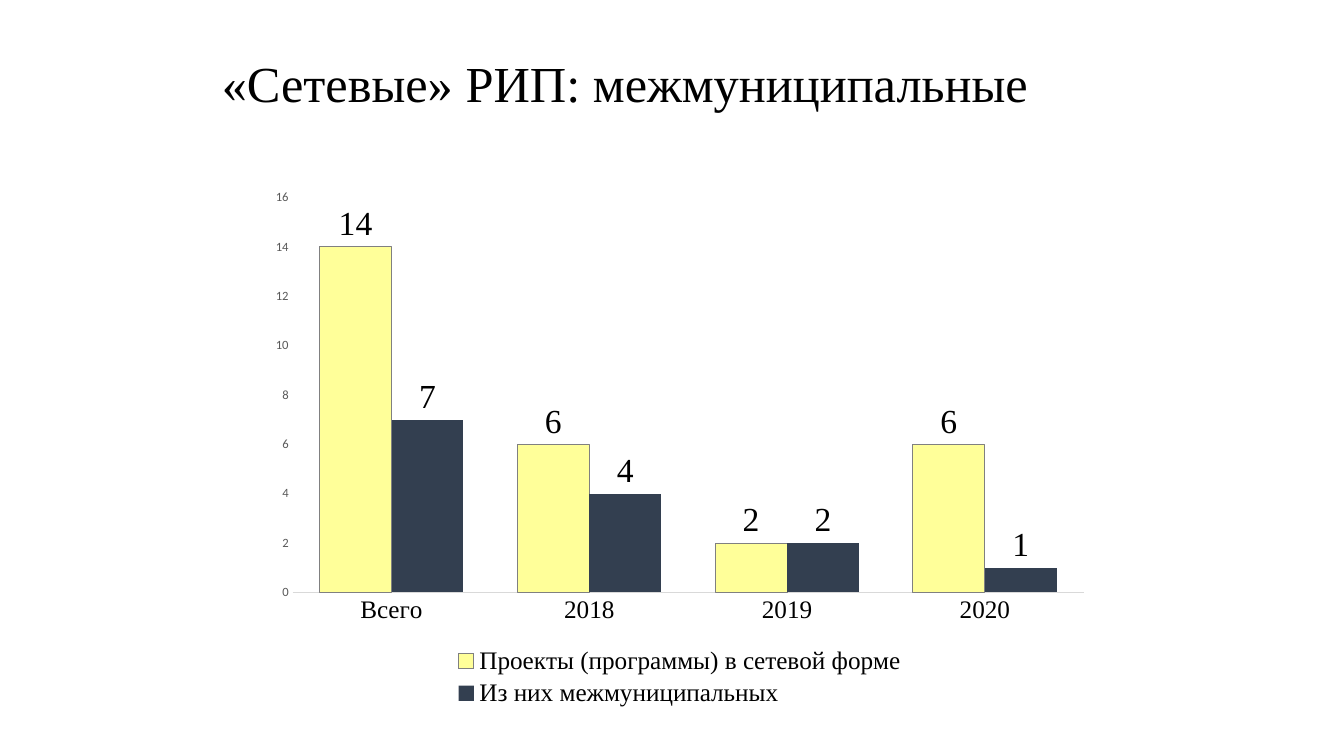
"""Build a slide with a clustered column chart of network projects by year."""
from lxml import etree
from pptx import Presentation
from pptx.chart.data import CategoryChartData
from pptx.dml.color import RGBColor
from pptx.enum.chart import XL_CHART_TYPE as ChartType
from pptx.enum.chart import XL_LABEL_POSITION as LabelPosition
from pptx.enum.chart import XL_LEGEND_POSITION as LegendPosition
from pptx.enum.chart import XL_TICK_MARK as TickMark
from pptx.enum.text import MSO_ANCHOR, MSO_AUTO_SIZE, PP_ALIGN
from pptx.oxml.ns import qn
from pptx.util import Pt

BLACK = RGBColor(0x00, 0x00, 0x00)
WHITE = RGBColor(0xFF, 0xFF, 0xFF)
GREY = RGBColor(0x80, 0x80, 0x80)
DARK_GREY = RGBColor(0x59, 0x59, 0x59)
LIGHT_GREY = RGBColor(0xD9, 0xD9, 0xD9)
YELLOW = RGBColor(0xFF, 0xFF, 0x99)
NAVY = RGBColor(0x33, 0x3F, 0x50)

SERIF = "Times New Roman"
SANS = "Calibri"

PERIODS = ["Всего", "2018", "2019", "2020"]
PROJECTS = [
    ("Проекты (программы) в сетевой форме", [14, 6, 2, 6], YELLOW, GREY),
    ("Из них межмуниципальных", [7, 4, 2, 1], NAVY, None),
]


def style_font(font, size, color=BLACK, name=SERIF):
    font.size = Pt(size)
    font.name = name
    font.bold = False
    font.color.rgb = color


def set_layout(parent, index, x, y, w, h, inner=False):
    for old in parent.findall(qn("c:layout")):
        parent.remove(old)
    layout = etree.Element(qn("c:layout"))
    manual = etree.SubElement(layout, qn("c:manualLayout"))
    settings = [("layoutTarget", "inner")] if inner else []
    settings += [("xMode", "edge"), ("yMode", "edge"),
                 ("x", x), ("y", y), ("w", w), ("h", h)]
    for tag, value in settings:
        etree.SubElement(manual, qn(f"c:{tag}")).set("val", str(value))
    parent.insert(index, layout)


def write_title(slide, text):
    title = slide.shapes.title
    title.left, title.top, title.width, title.height = (
        Pt(151.2), Pt(9.4), Pt(620.6), Pt(104.4))
    frame = title.text_frame
    frame.auto_size = MSO_AUTO_SIZE.NONE
    frame.word_wrap = True
    frame.vertical_anchor = MSO_ANCHOR.MIDDLE
    paragraph = frame.paragraphs[0]
    paragraph.alignment = PP_ALIGN.LEFT
    paragraph.line_spacing = 0.9
    run = paragraph.add_run()
    run.text = text
    style_font(run.font, 36)


def style_axes(chart):
    periods, counts = chart.category_axis, chart.value_axis
    for axis in (periods, counts):
        axis.has_major_gridlines = False
        axis.major_tick_mark = axis.minor_tick_mark = TickMark.NONE
    style_font(periods.tick_labels.font, 18)
    periods.format.line.color.rgb = LIGHT_GREY
    periods.format.line.width = Pt(0.75)
    style_font(counts.tick_labels.font, 9, DARK_GREY, SANS)
    counts.format.line.fill.background()
    counts.minimum_scale, counts.maximum_scale = 0, 16
    counts.major_unit = 2


def style_columns(series, fill, outline):
    series.invert_if_negative = False
    series.format.fill.solid()
    series.format.fill.fore_color.rgb = fill
    if outline is None:
        series.format.line.fill.background()
    else:
        series.format.line.color.rgb = outline
        series.format.line.width = Pt(0.75)
    labels = series.data_labels
    labels.show_value = True
    labels.position = LabelPosition.OUTSIDE_END
    style_font(labels.font, 24)


def add_projects_chart(slide):
    projects = CategoryChartData()
    projects.categories = PERIODS
    for name, counts, _, _ in PROJECTS:
        projects.add_series(name, counts)
    chart = slide.shapes.add_chart(
        ChartType.COLUMN_CLUSTERED, Pt(185), Pt(128.2), Pt(601.2), Pt(380.2),
        projects).chart
    style_font(chart.font, 10, BLACK, SANS)
    chart.has_title = False
    style_axes(chart)

    plot = chart.plots[0]
    plot.gap_width, plot.overlap = 75, 0
    plot.vary_by_categories = False
    for series, (_, _, fill, outline) in zip(plot.series, PROJECTS):
        style_columns(series, fill, outline)

    chart.has_legend = True
    legend = chart.legend
    legend.position = LegendPosition.BOTTOM
    legend.include_in_layout = False
    style_font(legend.font, 18)
    chart_part = chart.element.find(qn("c:chart"))
    set_layout(chart_part.find(qn("c:plotArea")), 0,
               0.04, 0.034, 0.94, 0.742, inner=True)
    set_layout(chart_part.find(qn("c:legend")), 1, 0.23, 0.87, 0.54, 0.13)


def main():
    deck = Presentation()
    deck.slide_width, deck.slide_height = Pt(960), Pt(540)
    slide = deck.slides.add_slide(deck.slide_layouts[5])
    slide.background.fill.solid()
    slide.background.fill.fore_color.rgb = WHITE
    write_title(slide, "«Сетевые» РИП: межмуниципальные")
    add_projects_chart(slide)
    deck.save("out.pptx")


if __name__ == "__main__":
    main()
